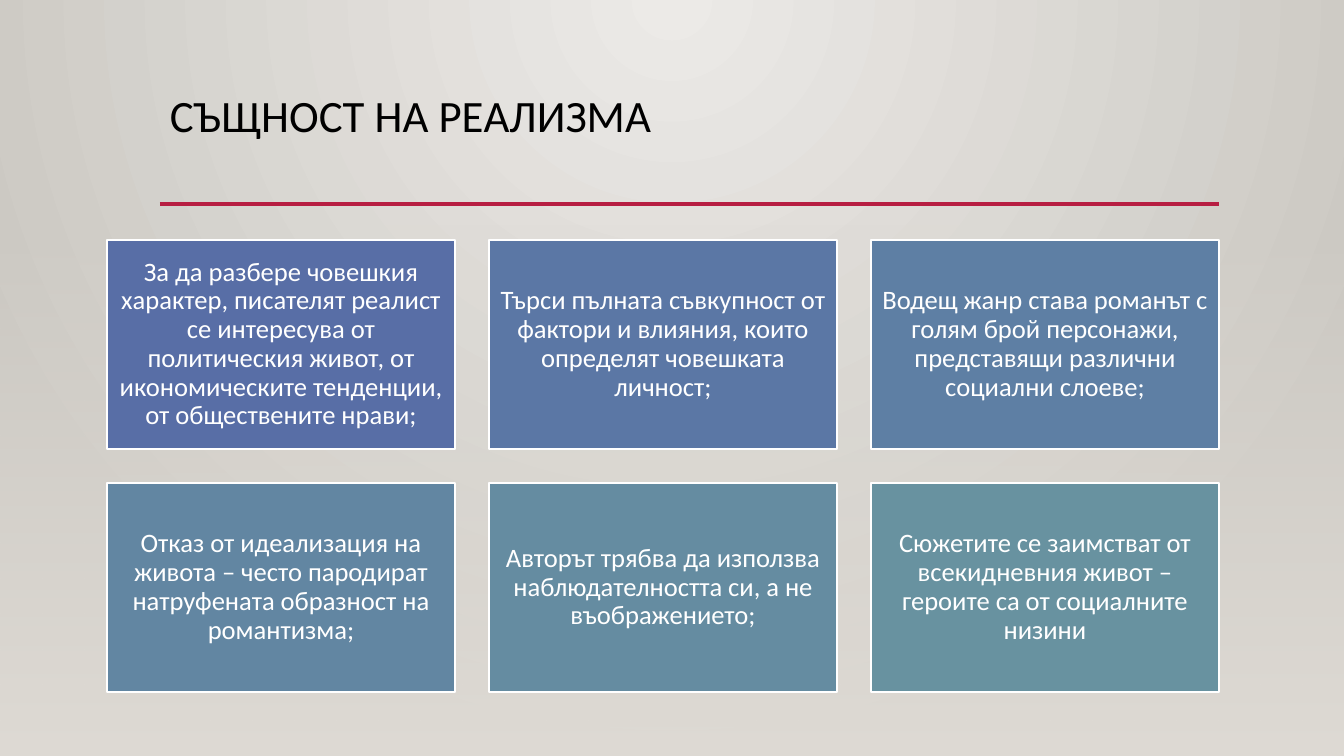
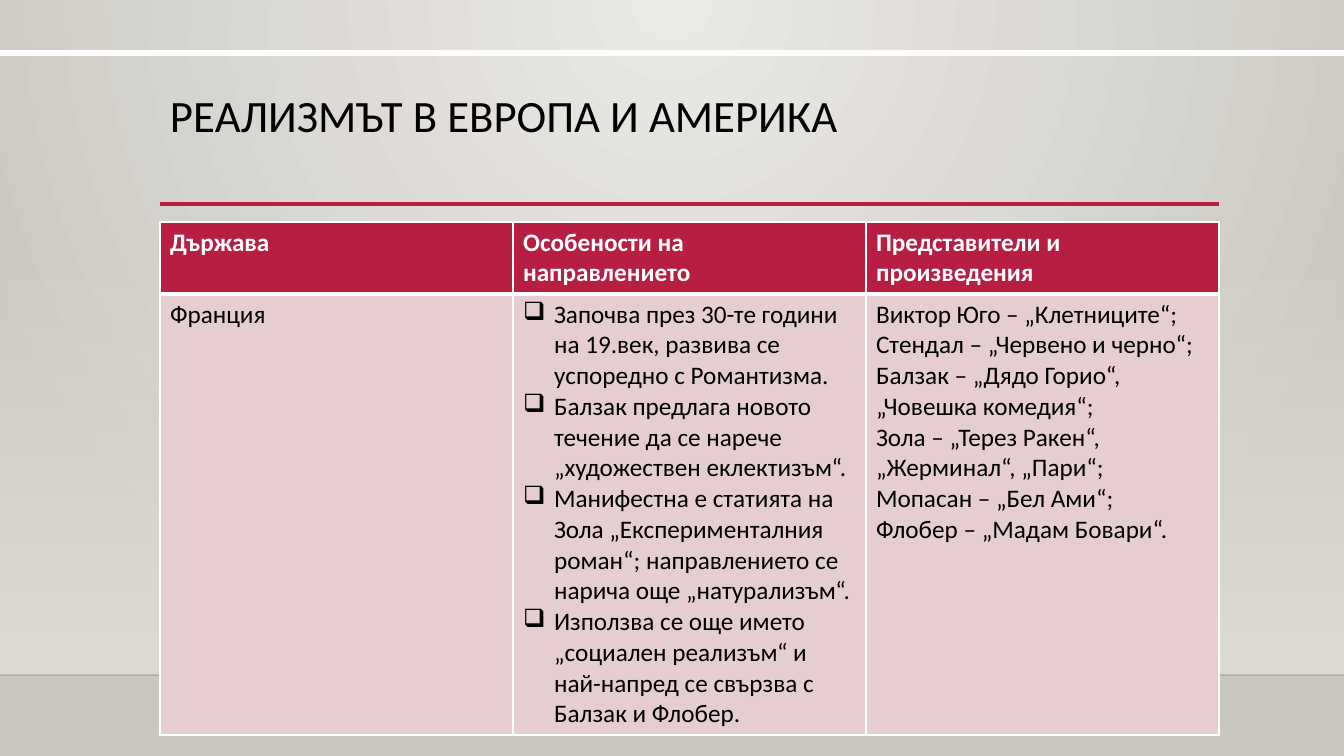
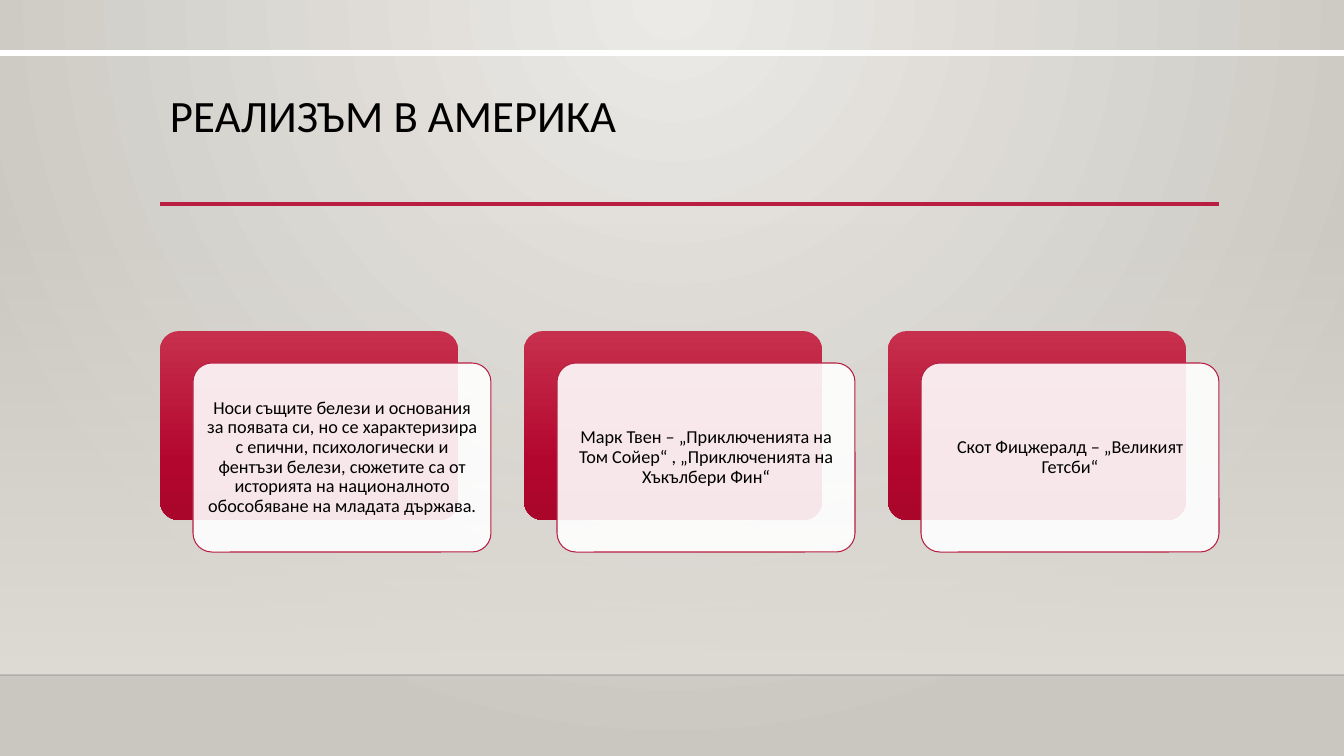
from dataclasses import dataclass
from typing import NamedTuple, Optional

from lxml.etree import SubElement
from pptx import Presentation
from pptx.dml.color import RGBColor
from pptx.enum.shapes import MSO_CONNECTOR as Link, MSO_SHAPE as Shape
from pptx.enum.text import MSO_ANCHOR as Anchor, PP_ALIGN as Align
from pptx.oxml import parse_xml
from pptx.oxml.ns import nsdecls, qn
from pptx.util import Emu, Pt

SLIDE_W, SLIDE_H = 1344, 756
EMU_PER_PX = 12192000 / SLIDE_W


def px(n: int) -> Emu:
    return Emu(round(n * EMU_PER_PX))


class Stop(NamedTuple):
    at: int
    color: str
    alpha: int = 100


class Box(NamedTuple):
    left: int
    top: int
    width: int
    height: int

    def emu(self) -> list[Emu]:
        return [px(n) for n in self]

    def shifted(self, dx: int, dy: int) -> "Box":
        return self._replace(left=self.left + dx, top=self.top + dy)


@dataclass(frozen=True)
class Grid:
    first: Box
    columns: int
    pitch_x: int
    pitch_y: int = 0

    def box(self, i: int) -> Box:
        row, col = divmod(i, self.columns)
        return self.first.shifted(col * self.pitch_x, row * self.pitch_y)


@dataclass(frozen=True)
class Theme:
    font: str = "Calibri"
    title_size: int = 32
    idea_size: int = 19
    table_size: int = 18
    card_size: int = 13
    text: str = "000000"
    white: str = "FFFFFF"
    accent: str = "B71E42"
    floor_line: str = "000001"
    table_body: str = "E6CDCF"
    ideas: tuple[str, ...] = ("586EA6", "5B77A5", "5E7FA4", "6286A2", "658CA1", "6892A0")
    backdrop: tuple[Stop, ...] = (Stop(0, "ECEAE7"), Stop(100, "CAC7C1"))
    panel: tuple[Stop, ...] = (Stop(0, "DFDBD5", 0), Stop(100, "DFDBD5"))
    card: tuple[Stop, ...] = (Stop(0, "C7304C"), Stop(69, "B3062F"), Stop(100, "AA062C"))


T = Theme()
DOWNWARD = '<a:lin ang="5400000" scaled="0"/>'
FROM_TOP = '<a:path path="circle"><a:fillToRect l="43000" t="0" r="43000" b="100000"/></a:path>'
MARGIN, CONTENT_W = 160, 1059
PANEL_TOP, FLOOR = 223, 675

IDEA_GRID = Grid(Box(107, 240, 348, 209), columns=3, pitch_x=382, pitch_y=243)
CARD_GRID = Grid(Box(MARGIN, 331, 298, 189), columns=3, pitch_x=364)
CARD_SHIFT = (33, 32)

IDEAS = (
    "За да разбере човешкия характер, писателят реалист се интересува от политическия живот, "
    "от икономическите тенденции, от обществените нрави;",
    "Търси пълната съвкупност от фактори и влияния, които определят човешката личност;",
    "Водещ жанр става романът с голям брой персонажи, представящи различни социални слоеве;",
    "Отказ от идеализация на живота – често пародират натруфената образност на романтизма;",
    "Авторът трябва да използва наблюдателността си, а не въображението;",
    "Сюжетите се заимстват от всекидневния живот – героите са от социалните низини",
)
HEADERS = ("Държава", "Особености на направлението", "Представители и произведения")
FEATURES = (
    "Започва през 30-те години на 19.век, развива се успоредно с Романтизма.\n"
    "Балзак предлага новото течение да се нарече „художествен еклектизъм“.\n"
    "Манифестна е статията на Зола „Експерименталния роман“; "
    "направлението се нарича още „натурализъм“.\n"
    "Използва се още името „социален реализъм“ и най-напред се свързва с Балзак и Флобер."
)
AUTHORS = (
    "Виктор Юго – „Клетниците“;\n"
    "Стендал – „Червено и черно“;\n"
    "Балзак – „Дядо Горио“, „Човешка комедия“;\n"
    "Зола – „Терез Ракен“, „Жерминал“, „Пари“;\n"
    "Мопасан – „Бел Ами“;\n"
    "Флобер – „Мадам Бовари“."
)
AMERICA = (
    "Носи същите белези и основания за появата си, но се характеризира с епични, психологически "
    "и фентъзи белези, сюжетите са от историята на националното обособяване на младата държава.",
    "Марк Твен – „Приключенията на Том Сойер“ , „Приключенията на Хъкълбери Фин“",
    "Скот Фицжералд – „Великият Гетсби“",
)


def rgb(color: str) -> RGBColor:
    return RGBColor.from_string(color)


def add_alpha(element, percent: int) -> None:
    color = next(element.iter(qn("a:srgbClr")))
    SubElement(color, qn("a:alpha")).set("val", str(percent * 1000))


def paint_gradient(element, fill, stops: tuple[Stop, ...], shading: str) -> None:
    fill.gradient()
    marks = "".join(
        f'<a:gs pos="{s.at * 1000}"><a:srgbClr val="{s.color}">'
        f'<a:alpha val="{s.alpha * 1000}"/></a:srgbClr></a:gs>'
        for s in stops
    )
    old = next(element.iter(qn("a:gradFill")))
    new = parse_xml(
        f'<a:gradFill {nsdecls("a")} rotWithShape="1"><a:gsLst>{marks}</a:gsLst>{shading}</a:gradFill>'
    )
    old.getparent().replace(old, new)


def write(tf, text: str, *, size: int, color: str = T.text, bold: bool = False,
          align: Align = Align.LEFT, spacing: float = 1.0, bullet: str = "") -> None:
    tf.word_wrap = True
    for i, line in enumerate(text.split("\n")):
        p = tf.paragraphs[0] if i == 0 else tf.add_paragraph()
        p.alignment, p.line_spacing = align, spacing
        if bullet:
            pPr = p._p.get_or_add_pPr()
            pPr.set("marL", str(px(31)))
            pPr.set("indent", str(-px(31)))
            SubElement(pPr, qn("a:buChar")).set("char", bullet)
        r = p.add_run()
        r.text = line
        r.font.name, r.font.size, r.font.bold = T.font, Pt(size), bold
        r.font.color.rgb = rgb(color)


def add_box(slide, box: Box, *, kind: Shape = Shape.RECTANGLE, fill: str = "",
            stops: tuple[Stop, ...] = (), alpha: int = 100, line: str = "",
            line_width: float = 1, radius: Optional[float] = None):
    s = slide.shapes.add_shape(kind, *box.emu())
    s.shadow.inherit = False
    if radius is not None:
        s.adjustments[0] = radius
    if stops:
        paint_gradient(s._element.spPr, s.fill, stops, DOWNWARD)
    else:
        s.fill.solid()
        s.fill.fore_color.rgb = rgb(fill)
        if alpha < 100:
            add_alpha(s._element.spPr, alpha)
    if line:
        s.line.color.rgb, s.line.width = rgb(line), Pt(line_width)
    else:
        s.line.fill.background()
    return s


def add_rule(slide, left: int, y: int, width: int, *, color: str, weight: float,
             alpha: int = 100) -> None:
    c = slide.shapes.add_connector(Link.STRAIGHT, px(left), px(y), px(left + width), px(y))
    c.line.color.rgb, c.line.width = rgb(color), Pt(weight)
    spPr = c._element.spPr
    if alpha < 100:
        add_alpha(spPr, alpha)
    SubElement(spPr, qn("a:effectLst"))


def write_centred(s, text: str, *, size: int, color: str, inset: int) -> None:
    tf = s.text_frame
    tf.vertical_anchor = Anchor.MIDDLE
    tf.margin_left = tf.margin_right = tf.margin_top = tf.margin_bottom = px(inset)
    write(tf, text, size=size, color=color, align=Align.CENTER, spacing=0.9)


def add_slide(prs, title: str, *, banded: bool = True):
    slide = prs.slides.add_slide(prs.slide_layouts[6])
    bottom = FLOOR if banded else SLIDE_H
    add_box(slide, Box(0, PANEL_TOP, SLIDE_W, bottom - PANEL_TOP), stops=T.panel)
    if banded:
        add_rule(slide, 0, FLOOR, SLIDE_W, color=T.floor_line, weight=1, alpha=20)
        add_box(slide, Box(0, 50, SLIDE_W, 6), fill=T.white)
    add_rule(slide, MARGIN, 204, CONTENT_W, color=T.accent, weight=2.5)
    tb = slide.shapes.add_textbox(*Box(MARGIN, 89, CONTENT_W, 116).emu())
    write(tb.text_frame, title, size=T.title_size, spacing=0.9)
    return slide


def set_borders(cell, **widths: float) -> None:
    tcPr = cell._tc.get_or_add_tcPr()
    for i, (side, width) in enumerate(widths.items()):
        tcPr.insert(i, parse_xml(
            f'<a:ln{side} {nsdecls("a")} w="{Pt(width)}"><a:solidFill>'
            f'<a:srgbClr val="{T.white}"/></a:solidFill></a:ln{side}>'
        ))


def build_essence(prs) -> None:
    slide = add_slide(prs, "СЪЩНОСТ НА РЕАЛИЗМА", banded=False)
    for i, (idea, color) in enumerate(zip(IDEAS, T.ideas)):
        s = add_box(slide, IDEA_GRID.box(i), fill=color, line=T.white, line_width=1.25)
        write_centred(s, idea, size=T.idea_size, color=T.white, inset=8)


def build_countries(prs) -> None:
    slide = add_slide(prs, "РЕАЛИЗМЪТ В ЕВРОПА И АМЕРИКА")
    heights = (72, 441)
    box = Box(MARGIN, 222, CONTENT_W, sum(heights))
    table = slide.shapes.add_table(2, len(HEADERS), *box.emu()).table
    for row, height in zip(table.rows, heights):
        row.height = px(height)
    for col, texts in enumerate(zip(HEADERS, ("Франция", FEATURES, AUTHORS))):
        table.columns[col].width = px(CONTENT_W // len(HEADERS))
        for row, text in enumerate(texts):
            cell, header = table.cell(row, col), row == 0
            cell.fill.solid()
            cell.fill.fore_color.rgb = rgb(T.accent if header else T.table_body)
            set_borders(cell, L=1, R=1, T=1 if header else 3, B=3 if header else 1)
            write(cell.text_frame, text, size=T.table_size, bold=header,
                  color=T.white if header else T.text, bullet="❑" if text == FEATURES else "")


def build_america(prs) -> None:
    slide = add_slide(prs, "РЕАЛИЗЪМ В АМЕРИКА")
    for i, text in enumerate(AMERICA):
        back = CARD_GRID.box(i)
        add_box(slide, back, kind=Shape.ROUNDED_RECTANGLE, stops=T.card, radius=0.1)
        front = add_box(slide, back.shifted(*CARD_SHIFT), kind=Shape.ROUNDED_RECTANGLE,
                        fill=T.white, alpha=90, line=T.accent, line_width=0.75, radius=0.1)
        write_centred(front, text, size=T.card_size, color=T.text, inset=5)


def main() -> None:
    prs = Presentation()
    prs.slide_width, prs.slide_height = px(SLIDE_W), px(SLIDE_H)
    master = prs.slide_master
    paint_gradient(master.element, master.background.fill, T.backdrop, FROM_TOP)
    build_essence(prs)
    build_countries(prs)
    build_america(prs)
    prs.save("out.pptx")


if __name__ == "__main__":
    main()
